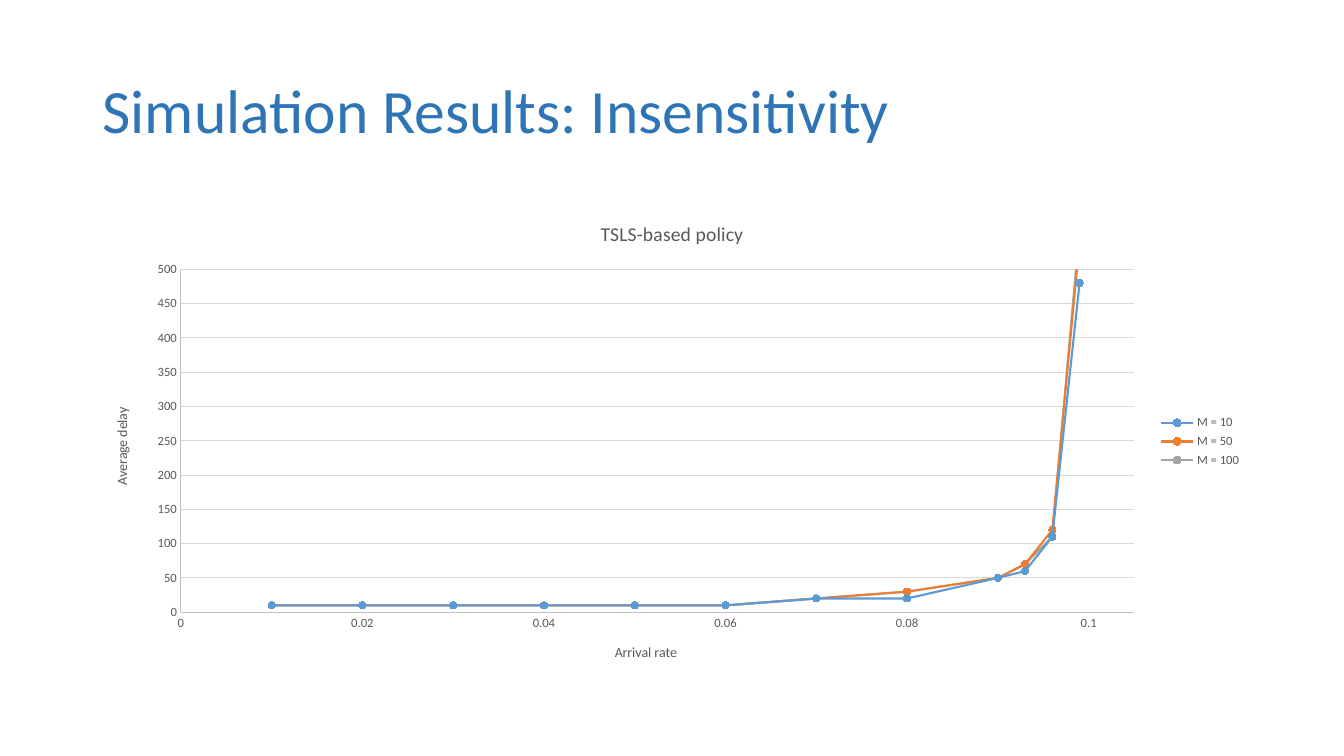
from dataclasses import dataclass

from pptx import Presentation
from pptx.chart.data import XyChartData
from pptx.dml.color import RGBColor
from pptx.enum.chart import XL_CHART_TYPE as ChartType
from pptx.enum.chart import XL_LEGEND_POSITION as LegendPosition
from pptx.enum.chart import XL_MARKER_STYLE as MarkerStyle
from pptx.enum.chart import XL_TICK_LABEL_POSITION as LabelPosition
from pptx.enum.chart import XL_TICK_MARK as TickMark
from pptx.enum.text import MSO_ANCHOR as Anchor
from pptx.enum.text import MSO_AUTO_SIZE as AutoSize
from pptx.enum.text import PP_ALIGN as Align
from pptx.util import Cm, Pt

FONT = "Calibri"
COLORS = {
    "title": "2E75B6",
    "label": "595959",
    "axis": "BFBFBF",
    "grid": "D9D9D9",
    "blue": "5B9BD5",
    "orange": "ED7D31",
    "gray": "A5A5A5",
}
ARRIVAL_RATES = (0.01, 0.02, 0.03, 0.04, 0.05, 0.06,
                 0.07, 0.08, 0.09, 0.093, 0.096, 0.099)


@dataclass(frozen=True)
class DelayCurve:
    name: str
    color: str
    delays: tuple[float, ...]


@dataclass(frozen=True)
class AxisSetup:
    title: str
    maximum: float
    step: float


CURVES = (
    DelayCurve("M = 10", "blue", (10, 10, 10, 10, 10, 10, 20, 20, 50, 60, 110, 480)),
    DelayCurve("M = 50", "orange", (10, 10, 10, 10, 10, 10, 20, 30, 50, 70, 120, 540)),
    DelayCurve("M = 100", "gray", (10, 10, 10, 10, 10, 10, 20, 30, 50, 70, 110, 560)),
)
RATE_AXIS = AxisSetup("Arrival rate", 0.105, 0.02)
DELAY_AXIS = AxisSetup("Average delay", 500, 50)


def rgb(name: str) -> RGBColor:
    return RGBColor.from_string(COLORS[name])


def style_font(font, size: float, color: str, bold: bool = False) -> None:
    font.name = FONT
    font.size = Pt(size)
    font.bold = bold
    font.color.rgb = rgb(color)


def style_line(line, color: str, width: float) -> None:
    line.color.rgb = rgb(color)
    line.width = Pt(width)


def write_caption(frame, text: str, size: float) -> None:
    frame.text = text
    style_font(frame.paragraphs[0].font, size, "label")


def format_axis(axis, setup: AxisSetup) -> None:
    axis.minimum_scale = 0
    axis.maximum_scale = setup.maximum
    axis.major_unit = setup.step
    axis.major_tick_mark = axis.minor_tick_mark = TickMark.NONE
    axis.tick_label_position = LabelPosition.NEXT_TO_AXIS
    axis.tick_labels.number_format = "General"
    axis.tick_labels.number_format_is_linked = False
    style_font(axis.tick_labels.font, 9, "label")
    style_line(axis.format.line, "axis", 0.75)
    write_caption(axis.axis_title.text_frame, setup.title, 10)


def format_curve(series, curve: DelayCurve) -> None:
    series.smooth = True
    style_line(series.format.line, curve.color, 1.5)
    marker = series.marker
    marker.style = MarkerStyle.CIRCLE
    marker.size = 5
    marker.format.fill.solid()
    marker.format.fill.fore_color.rgb = rgb(curve.color)
    style_line(marker.format.line, curve.color, 0.75)


def add_heading(slide, text: str) -> None:
    heading = slide.shapes.title
    heading.left, heading.top = Cm(2.33), Cm(1.01)
    heading.width, heading.height = Cm(29.21), Cm(3.68)
    frame = heading.text_frame
    frame.text = text
    frame.auto_size = AutoSize.NONE
    frame.vertical_anchor = Anchor.MIDDLE
    line = frame.paragraphs[0]
    line.alignment = Align.LEFT
    line.line_spacing = 0.9
    style_font(line.font, 44, "title")


def add_delay_chart(slide) -> None:
    results = XyChartData()
    for curve in CURVES:
        points = results.add_series(curve.name)
        for rate, delay in zip(ARRIVAL_RATES, curve.delays):
            points.add_data_point(rate, delay)
    chart = slide.shapes.add_chart(
        ChartType.XY_SCATTER_SMOOTH,
        Cm(2.33), Cm(5.08), Cm(29.21), Cm(12.09), results,
    ).chart
    chart.font.name = FONT
    chart.font.size = Pt(10)
    write_caption(chart.chart_title.text_frame, "TSLS-based policy", 14)
    chart.chart_title.include_in_layout = False

    # Axes and grid
    format_axis(chart.category_axis, RATE_AXIS)
    format_axis(chart.value_axis, DELAY_AXIS)
    chart.category_axis.has_major_gridlines = False
    chart.value_axis.has_major_gridlines = True
    style_line(chart.value_axis.major_gridlines.format.line, "grid", 0.75)

    # Curves and legend
    plot = chart.plots[0]
    plot.vary_by_categories = False
    for series, curve in zip(plot.series, CURVES):
        format_curve(series, curve)
    chart.has_legend = True
    chart.legend.position = LegendPosition.RIGHT
    chart.legend.include_in_layout = False
    style_font(chart.legend.font, 9, "label")


def main() -> None:
    deck = Presentation()
    deck.slide_width, deck.slide_height = Cm(33.87), Cm(19.05)
    slide = deck.slides.add_slide(deck.slide_layouts[5])
    add_heading(slide, "Simulation Results: Insensitivity")
    add_delay_chart(slide)
    deck.save("out.pptx")


if __name__ == "__main__":
    main()
